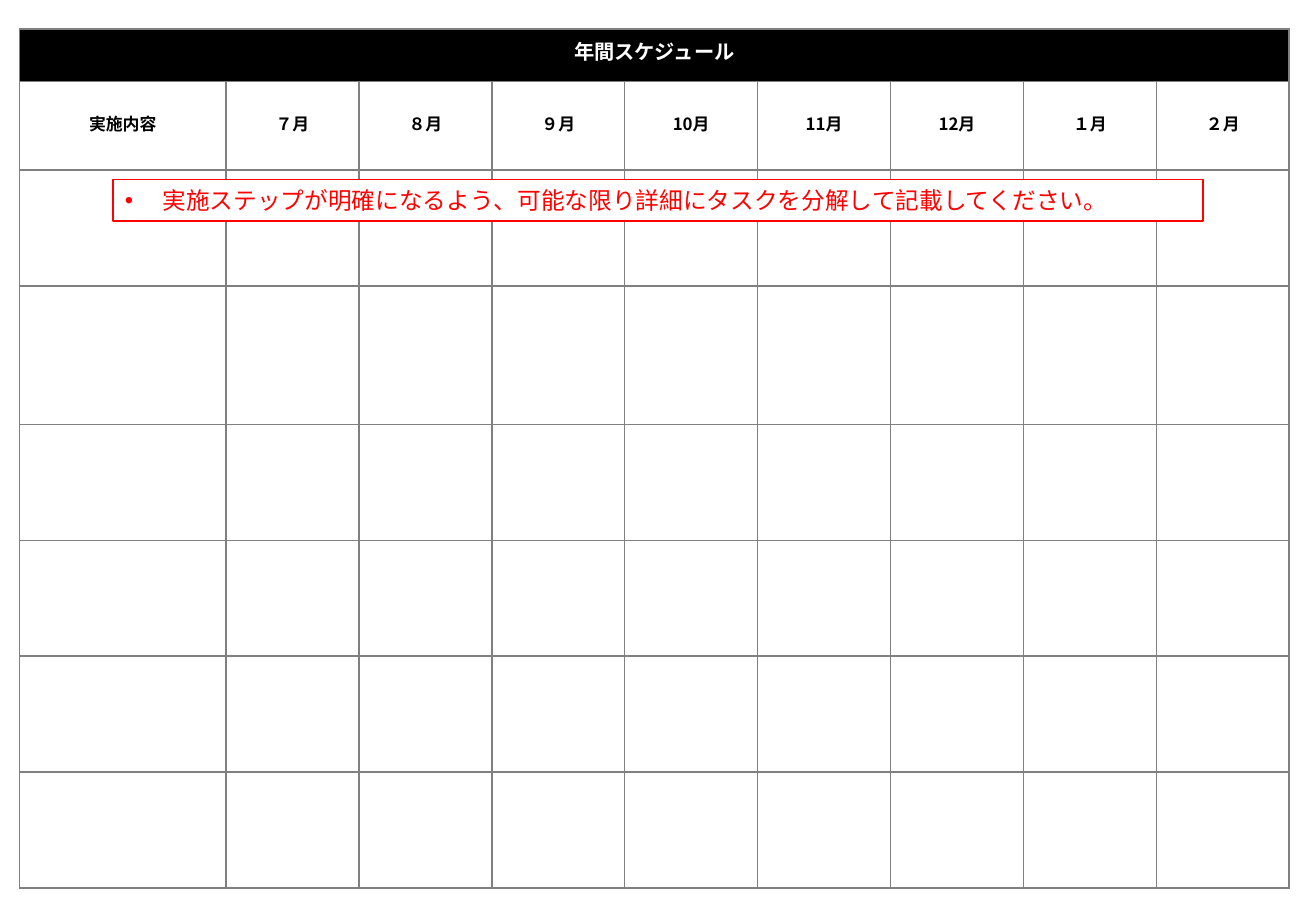
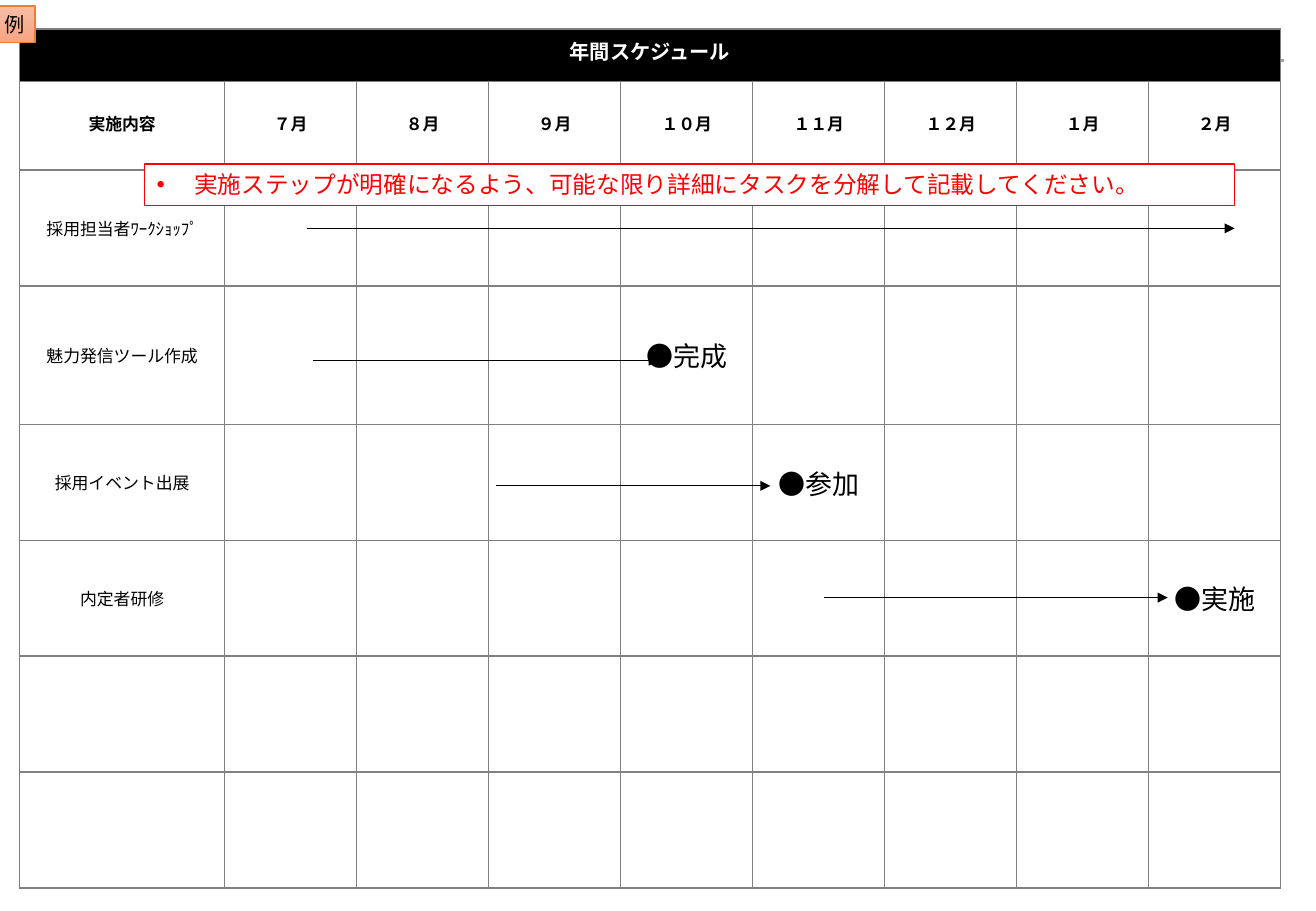
from dataclasses import dataclass

from lxml import etree
from pptx import Presentation
from pptx import util as u
from pptx.dml.color import RGBColor
from pptx.enum import shapes, text
from pptx.oxml import ns

BLACK = RGBColor(0x00, 0x00, 0x00)
WHITE = RGBColor(0xFF, 0xFF, 0xFF)
RED = RGBColor(0xFF, 0x00, 0x00)
GRID_GRAY = RGBColor(0x80, 0x80, 0x80)
RULE_GRAY = RGBColor(0xA5, 0xA5, 0xA5)
ORANGE = RGBColor(0xED, 0x7D, 0x31)
PALE_ORANGE = RGBColor(0xF7, 0xBD, 0xA5)
SOFT_ORANGE = RGBColor(0xF8, 0xA5, 0x82)

FONT = "Noto Sans CJK JP"
TITLE = "年間スケジュール"
NOTE = "実施ステップが明確になるよう、可能な限り詳細にタスクを分解して記載してください。"
TABLE_LEFT, TABLE_TOP, TABLE_HEIGHT = 0.16, 0.24, 7.07
TITLE_ROW, HEADER_ROW, TALL_ROW = 0.43, 0.73, 1.14
TASK_ROWS, TALL_TASK, MONTH_COUNT = 6, 1, 8


@dataclass(frozen=True)
class TextStyle:
    size: float
    color: RGBColor = BLACK
    bold: bool = False
    line_spacing: float | None = None
    alignment: text.PP_ALIGN = text.PP_ALIGN.CENTER


@dataclass(frozen=True)
class Task:
    name: str
    start: float
    end: float
    y: float
    milestone: str = ""
    month: int = 0


@dataclass(frozen=True)
class Schedule:
    width: float
    first_column: float
    months: tuple[str, ...]
    note_left: float
    note_top: float
    tasks: tuple[Task, ...] = ()
    badge: str = ""


TITLE_STYLE = TextStyle(12, WHITE, True, 12)
HEADER_STYLE = TextStyle(10, bold=True, line_spacing=12)
TASK_STYLE = TextStyle(10)
MILESTONE_STYLE = TextStyle(16)
NOTE_STYLE = TextStyle(14, RED, alignment=text.PP_ALIGN.LEFT)
BADGE_STYLE = TextStyle(12)

SCHEDULES = (
    Schedule(10.45, 1.7,
             ("７月", "８月", "９月", "10月", "11月", "12月", "１月", "２月"),
             0.93, 1.48),
    Schedule(10.38, 1.69,
             ("７月", "８月", "９月", "１０月", "１１月", "１２月", "１月", "２月"),
             1.19, 1.35,
             (Task("採用担当者ﾜｰｸｼｮｯﾌﾟ", 2.53, 10.16, 1.88),
              Task("魅力発信ツール作成", 2.58, 5.42, 2.97, "●完成", 4),
              Task("採用イベント出展", 4.08, 6.34, 4, "●参加", 5),
              Task("内定者研修", 6.78, 9.61, 4.92, "●実施", 8)),
             "例"),
)


def set_formats(target, formats: dict) -> None:
    for name, value in formats.items():
        setattr(target, name, value)


def add_element(parent, tag: str, **attributes: str):
    return etree.SubElement(parent, ns.qn(tag), attributes)


def write_text(frame, content: str, style: TextStyle):
    paragraph = frame.paragraphs[0]
    paragraph.alignment = style.alignment
    if style.line_spacing:
        paragraph.line_spacing = u.Pt(style.line_spacing)
    run = paragraph.add_run()
    run.text = content
    set_formats(run.font, {"size": u.Pt(style.size), "bold": style.bold, "name": FONT})
    run.font.color.rgb = style.color
    add_element(run.font._element, "a:ea", typeface=FONT)
    return paragraph


def add_line(slide, left: float, right: float, y: float, color: RGBColor,
             width: float, arrow: bool = False):
    connector = slide.shapes.add_connector(
        shapes.MSO_CONNECTOR.STRAIGHT,
        u.Inches(left), u.Inches(y), u.Inches(right), u.Inches(y))
    connector.line.color.rgb = color
    connector.line.width = u.Pt(width)
    if arrow:
        add_element(connector.line._get_or_add_ln(), "a:tailEnd", type="triangle")
    add_element(connector.element.spPr, "a:effectLst")
    return connector


def add_box(slide, left: float, top: float, width: float, height: float,
            border: RGBColor, border_width: float):
    shape = slide.shapes.add_shape(
        shapes.MSO_SHAPE.RECTANGLE,
        u.Inches(left), u.Inches(top), u.Inches(width), u.Inches(height))
    shape.shadow.inherit = False
    shape.line.color.rgb = border
    shape.line.width = u.Pt(border_width)
    return shape


def format_cell(cell, fill: RGBColor | None) -> None:
    properties = cell._tc.get_or_add_tcPr()
    for side in ("a:lnL", "a:lnR", "a:lnT", "a:lnB"):
        border = add_element(properties, side, w=str(u.Pt(1)))
        solid = add_element(border, "a:solidFill")
        add_element(solid, "a:srgbClr", val=str(GRID_GRAY))
    if fill is None:
        cell.fill.background()
    else:
        cell.fill.solid()
        cell.fill.fore_color.rgb = fill
    cell.vertical_anchor = text.MSO_ANCHOR.MIDDLE


def add_schedule_table(slide, schedule: Schedule) -> None:
    table = slide.shapes.add_table(
        TASK_ROWS + 2, MONTH_COUNT + 1, u.Inches(TABLE_LEFT), u.Inches(TABLE_TOP),
        u.Inches(schedule.width), u.Inches(TABLE_HEIGHT)).table
    set_formats(table, {"first_row": False, "horz_banding": False})

    month_width = (schedule.width - schedule.first_column) / MONTH_COUNT
    widths = [schedule.first_column] + [month_width] * MONTH_COUNT
    for column, width in zip(table.columns, widths):
        column.width = u.Inches(width)

    task_height = (TABLE_HEIGHT - TITLE_ROW - HEADER_ROW - TALL_ROW) / (TASK_ROWS - 1)
    task_heights = [task_height] * TASK_ROWS
    task_heights[TALL_TASK] = TALL_ROW
    for row, height in zip(table.rows, [TITLE_ROW, HEADER_ROW, *task_heights]):
        row.height = u.Inches(height)

    for row_index, row in enumerate(table.rows):
        for cell in row.cells:
            format_cell(cell, BLACK if row_index == 0 else None)
    table.cell(0, 0).merge(table.cell(0, MONTH_COUNT))

    write_text(table.cell(0, 0).text_frame, TITLE, TITLE_STYLE)
    for column_index, label in enumerate(("実施内容", *schedule.months)):
        write_text(table.cell(1, column_index).text_frame, label, HEADER_STYLE)
    for row_index, task in enumerate(schedule.tasks, start=2):
        write_text(table.cell(row_index, 0).text_frame, task.name, TASK_STYLE)
        if task.milestone:
            write_text(table.cell(row_index, task.month).text_frame,
                       task.milestone, MILESTONE_STYLE)


def add_note(slide, left: float, top: float) -> None:
    note = add_box(slide, left, top, 8.97, 0.34, RED, 0.75)
    note.fill.solid()
    note.fill.fore_color.rgb = WHITE
    set_formats(note.text_frame, {
        "word_wrap": True,
        "vertical_anchor": text.MSO_ANCHOR.TOP,
        "auto_size": text.MSO_AUTO_SIZE.SHAPE_TO_FIT_TEXT,
    })
    paragraph = write_text(note.text_frame, NOTE, NOTE_STYLE)
    properties = paragraph._p.get_or_add_pPr()
    indent = u.Inches(0.31)
    properties.set("marL", str(indent))
    properties.set("indent", str(-indent))
    add_element(properties, "a:buFont", typeface="Arial")
    add_element(properties, "a:buChar", char="•")


def add_badge(slide, label: str) -> None:
    badge = add_box(slide, -0.05, 0.05, 0.34, 0.3, ORANGE, 1)
    badge.fill.gradient()
    badge.fill.gradient_angle = 270
    for stop, color in zip(badge.fill.gradient_stops, (PALE_ORANGE, SOFT_ORANGE)):
        stop.color.rgb = color
    margins = dict.fromkeys(
        ("margin_left", "margin_top", "margin_right", "margin_bottom"), 0)
    set_formats(badge.text_frame, {
        **margins, "word_wrap": False, "vertical_anchor": text.MSO_ANCHOR.MIDDLE})
    write_text(badge.text_frame, label, BADGE_STYLE)


def add_schedule_slide(presentation, layout, schedule: Schedule):
    slide = presentation.slides.add_slide(layout)
    add_schedule_table(slide, schedule)
    add_note(slide, schedule.note_left, schedule.note_top)
    for task in schedule.tasks:
        add_line(slide, task.start, task.end, task.y, BLACK, 0.5, arrow=True)
    if schedule.badge:
        add_badge(slide, schedule.badge)
    return slide


def main() -> None:
    presentation = Presentation()
    set_formats(presentation, {
        "slide_width": u.Inches(10.83), "slide_height": u.Inches(7.5)})
    layout = presentation.slide_layouts[6]
    slides = [add_schedule_slide(presentation, layout, schedule)
              for schedule in SCHEDULES]
    rule = add_line(slides[0], 0.26, 10.57, 0.5, RULE_GRAY, 2)
    layout.shapes.element.append(rule.element)
    presentation.save("out.pptx")


if __name__ == "__main__":
    main()
